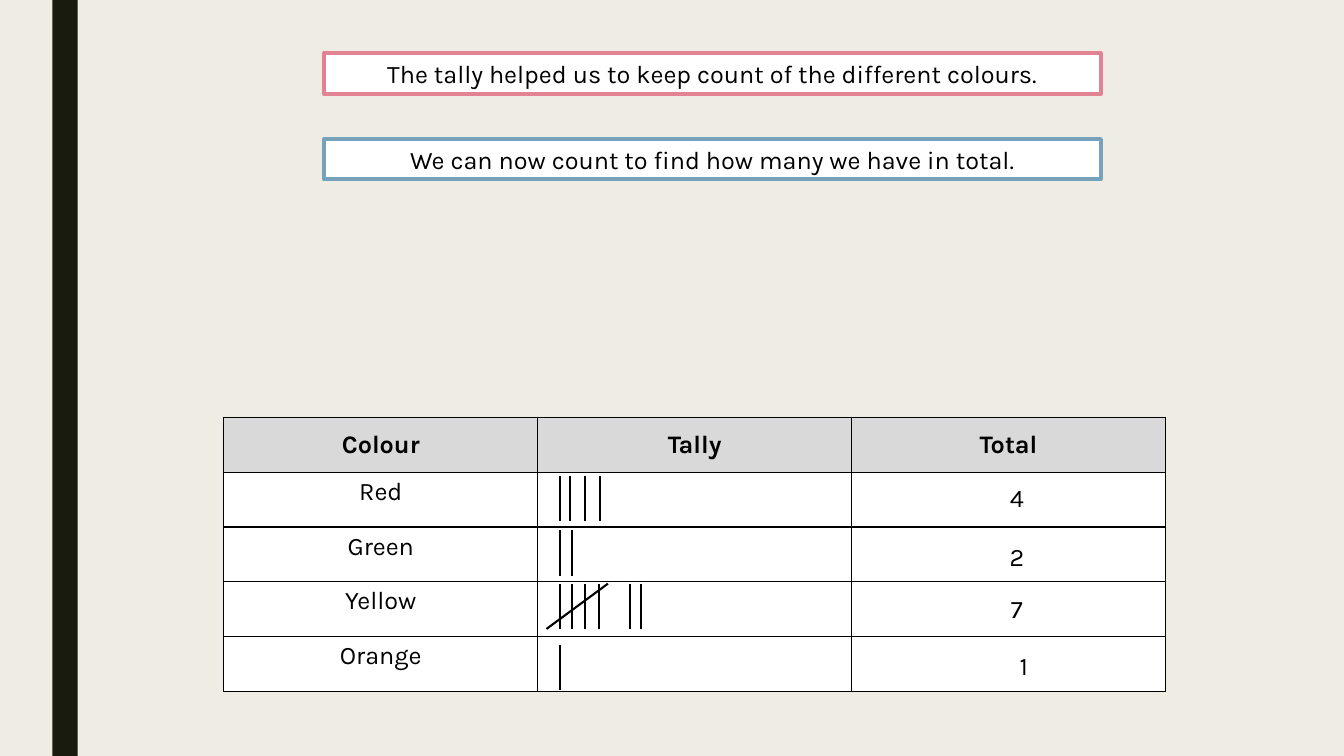
from lxml import etree
from pptx import Presentation
from pptx.dml.color import RGBColor
from pptx.enum.shapes import MSO_CONNECTOR as CONN, MSO_SHAPE as SHAPE
from pptx.enum.text import MSO_ANCHOR as ANCHOR, MSO_AUTO_SIZE as AUTO, PP_ALIGN as ALIGN
from pptx.oxml.ns import qn
from pptx.util import Inches, Pt


def rgb(value):
    return RGBColor.from_string(value)


def write(tf, text, font="Karla", size=18, color="000000", bold=False, align=ALIGN.CENTER):
    p = tf.paragraphs[0]
    p.alignment = align
    r = p.add_run()
    r.text = text
    r.font.name, r.font.size, r.font.bold = font, Pt(size), bold
    r.font.color.rgb = rgb(color)


class TallySlide:
    """Holds the style and the current slide, and draws each kind of element."""

    INK, PAPER, HEADER = "000000", "FFFFFF", "D9D9D9"
    BACKGROUND, BAR = "EFEDE3", "191B0E"

    def __init__(self, prs):
        self.s = prs.slides.add_slide(prs.slide_layouts[6])
        fill = self.s.background.fill
        fill.solid()
        fill.fore_color.rgb = rgb(self.BACKGROUND)

    def rect(self, x, y, w, h, fill, line=None, text=None):
        sp = self.s.shapes.add_shape(SHAPE.RECTANGLE, Inches(x), Inches(y), Inches(w), Inches(h))
        sp.shadow.inherit = False
        sp.fill.solid()
        sp.fill.fore_color.rgb = rgb(fill)
        if line:
            sp.line.color.rgb = rgb(line)
            sp.line.width = Pt(2.75)
        else:
            sp.line.fill.background()
        if text:
            self.fit(sp.text_frame, text)

    def label(self, x, y, w, h, text):
        sp = self.s.shapes.add_textbox(Inches(x), Inches(y), Inches(w), Inches(h))
        self.fit(sp.text_frame, text)

    def fit(self, tf, text):
        tf.word_wrap = True
        tf.auto_size = AUTO.SHAPE_TO_FIT_TEXT
        tf.vertical_anchor = ANCHOR.TOP
        write(tf, text, color=self.INK)

    def stroke(self, x1, y1, x2, y2):
        line = self.s.shapes.add_connector(CONN.STRAIGHT, Inches(x1), Inches(y1), Inches(x2), Inches(y2))
        line.line.color.rgb = rgb(self.INK)
        line.line.width = Pt(1.5)
        etree.SubElement(line._element.spPr, qn("a:effectLst"))

    def border(self, cell):
        tcPr = cell._tc.get_or_add_tcPr()
        for i, side in enumerate(("lnL", "lnR", "lnT", "lnB")):
            ln = etree.Element(qn(f"a:{side}"), w=str(Pt(1)))
            fill = etree.SubElement(ln, qn("a:solidFill"))
            etree.SubElement(fill, qn("a:srgbClr"), val=self.INK)
            tcPr.insert(i, ln)

    def table(self, x, y, w, h, headings, names):
        rows = [headings] + [(name, "", "") for name in names]
        shape = self.s.shapes.add_table(len(rows), len(headings), Inches(x), Inches(y), Inches(w), Inches(h))
        for i, row in enumerate(rows):
            for j, text in enumerate(row):
                cell = shape.table.cell(i, j)
                cell.fill.solid()
                cell.fill.fore_color.rgb = rgb(self.PAPER if i else self.HEADER)
                cell.vertical_anchor = ANCHOR.TOP if i else ANCHOR.MIDDLE
                self.border(cell)
                if text:
                    write(cell.text_frame, text, color=self.INK, bold=i == 0)


def main():
    prs = Presentation()
    prs.slide_width, prs.slide_height = Inches(13.33), Inches(7.5)
    slide = TallySlide(prs)
    slide.rect(0.52, 0, 0.25, 7.5, slide.BAR)

    for y, line, text in (
        (0.53, "E28394", "The tally helped us to keep count of the different colours."),
        (1.38, "77A2BB", "We can now count to find how many we have in total."),
    ):
        slide.rect(3.21, y, 7.71, 0.4, slide.PAPER, line, text)

    colours = (
        ("Red", 4.72, (5.55, 5.65, 5.8, 5.95), 9.13, 4.74, "4"),
        ("Green", 5.26, (5.55, 5.67), 9.13, 5.32, "2"),
        ("Yellow", 5.79, (5.55, 5.67, 5.8, 5.94, 6.25, 6.36), 9.13, 5.84, "7"),
        ("Orange", 6.4, (5.55,), 9.2, 6.4, "1"),
    )
    slide.table(2.22, 4.14, 9.34, 2.72, ("Colour", "Tally", "Total"), [c[0] for c in colours])
    for name, top, marks, total_x, total_y, total in colours:
        for x in marks:
            slide.stroke(x, top, x, top + 0.45)
        slide.label(total_x, total_y, 1.91, 0.4, total)
    slide.stroke(6.03, 5.79, 5.42, 6.24)

    prs.save("out.pptx")


if __name__ == "__main__":
    main()
